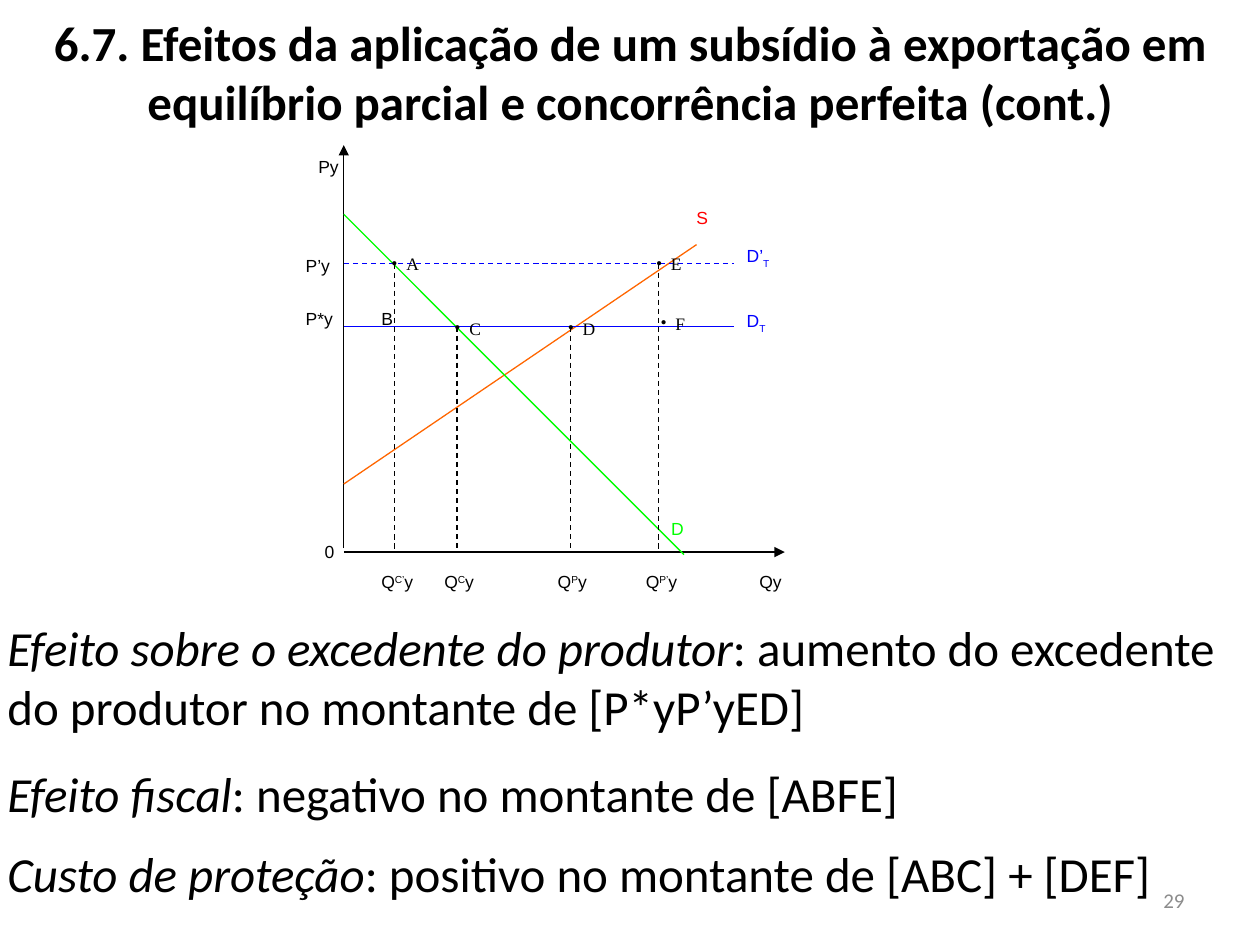
"""Builds the slide on the effects of an export subsidy in partial equilibrium."""
from dataclasses import dataclass

from lxml import etree
from pptx import Presentation
from pptx import util as u
from pptx.dml.color import RGBColor
from pptx.enum import dml, shapes, text
from pptx.oxml import ns


@dataclass(frozen=True)
class Theme:
    """Colours, fonts and type sizes of the slide."""
    ink: str = "000000"
    muted: str = "8C8C8C"
    demand: str = "00FF00"
    supply: str = "FF6600"
    supply_label: str = "FF0000"
    trade: str = "0000FF"
    body_font: str = "Calibri"
    label_font: str = "Arial"
    point_font: str = "Times New Roman"
    body_size: int = 28
    number_size: int = 12
    label_size: int = 10


THEME = Theme()
ORIGIN_X, ORIGIN_Y, UNIT = 6.93, 11.18, 0.254
WORLD_PRICE, SUBSIDY_PRICE = 18.1, 23.1
QUANTITIES = [
    (4, SUBSIDY_PRICE, "C’"),
    (9, WORLD_PRICE, "C"),
    (18, WORLD_PRICE, "P"),
    (25, SUBSIDY_PRICE, "P’"),
]
POINTS = [
    ("A", 2, 24.4, 0.2),
    ("C", 7, 19.3, 0.2),
    ("D", 16, 19.3, 0.2),
    ("E", 23, 24.4, 0.2),
    ("F", 23, 19.7, 0.29),
]
LABELS = [
    ("Py", -3, 32.1, THEME.ink),
    ("P’y", -4, 24.3, THEME.ink),
    ("P*y", -4, 20.1, THEME.ink),
    ("B", 2, 20.1, THEME.ink),
    ("0", -2.5, 1.6, THEME.ink),
    ("Qy", 32, -0.8, THEME.ink),
    ("D", 25, 3.4, THEME.demand),
    ("S", 27, 28.1, THEME.supply_label),
]
EFFECTS = [
    ("Efeito sobre o excedente do produtor",
     ": aumento do excedente do produtor no montante de [P*yP’yED]", 12.32, 2.64),
    ("Efeito fiscal", ": negativo no montante de [ABFE]", 15.27, 1.45),
    ("Custo de proteção", ": positivo no montante de [ABC] + [DEF]", 16.87, 1.45),
]


def place(quantity, price):
    """Turn a quantity and a price into a position on the slide."""
    return u.Cm(ORIGIN_X + quantity * UNIT), u.Cm(ORIGIN_Y - price * UNIT)


def style_run(run, size, font, colour=THEME.ink):
    """Set the size, font and colour of a run."""
    run.font.size = u.Pt(size)
    run.font.name = font
    run.font.color.rgb = RGBColor.from_string(colour)


def add_text(slide, parts, left, top, width, height, size, font, colour=THEME.ink):
    """Add a wrapping text box of one paragraph and return its frame."""
    frame = slide.shapes.add_textbox(left, top, width, height).text_frame
    frame.word_wrap = True
    for part in parts:
        run = frame.paragraphs[0].add_run()
        run.text = part
        style_run(run, size, font, colour)
    return frame


def add_label(slide, parts, quantity, price, colour=THEME.ink, shift=0,
              font=THEME.label_font):
    """Add a graph label whose second part is raised or lowered by shift percent."""
    frame = add_text(slide, parts, *place(quantity, price), u.Cm(2.03), u.Cm(0.76),
                     THEME.label_size, font, colour)
    for run in frame.paragraphs[0].runs[1:2]:
        run.font._element.set("baseline", str(shift * 1000))
    return frame


def add_point(slide, name, quantity, price, indent):
    """Add a named point marked by a bullet."""
    frame = add_label(slide, [name], quantity, price, font=THEME.point_font)
    frame.margin_left += u.Cm(indent)
    hang = u.Cm(0.3)
    properties = frame.paragraphs[0]._p.get_or_add_pPr()
    properties.set("marL", str(hang))
    properties.set("indent", str(-hang))
    etree.SubElement(properties, ns.qn("a:buFont")).set("typeface", THEME.point_font)
    etree.SubElement(properties, ns.qn("a:buChar")).set("char", "•")


def add_line(slide, start, end, colour=THEME.ink, dashed=False, arrow=False):
    """Draw a line between two quantity and price pairs."""
    connector = slide.shapes.add_connector(
        shapes.MSO_CONNECTOR.STRAIGHT, *place(*start), *place(*end))
    connector.line.width = u.Pt(0.75)
    connector.line.color.rgb = RGBColor.from_string(colour)
    if dashed:
        connector.line.dash_style = dml.MSO_LINE.DASH
    if arrow:
        outline = connector.line._get_or_add_ln()
        etree.SubElement(outline, ns.qn("a:tailEnd")).set("type", "triangle")
    etree.SubElement(connector._element.spPr, ns.qn("a:effectLst"))


def add_title(slide, wording):
    """Place and format the title."""
    title = slide.shapes.title
    title.left, title.top = u.Cm(0), u.Cm(0.13)
    title.width, title.height = u.Cm(25.4), u.Cm(2.64)
    frame = title.text_frame
    frame.text = wording
    frame.vertical_anchor = text.MSO_ANCHOR.TOP
    run = frame.paragraphs[0].runs[0]
    style_run(run, THEME.body_size, THEME.body_font)
    run.font.bold = True


def add_effect(slide, name, outcome, top, height):
    """Add a statement that opens with an effect in italics."""
    frame = add_text(slide, [name, outcome], u.Cm(-0.1), u.Cm(top), u.Cm(25.4),
                     u.Cm(height), THEME.body_size, THEME.body_font)
    frame.vertical_anchor = text.MSO_ANCHOR.MIDDLE
    frame.paragraphs[0].runs[0].font.italic = True


def add_page_number(slide, number):
    """Add the page number at the lower right."""
    frame = add_text(slide, [number], u.Cm(18.2), u.Cm(17.65), u.Cm(5.93), u.Cm(1.01),
                     THEME.number_size, THEME.body_font, THEME.muted)
    frame.vertical_anchor = text.MSO_ANCHOR.MIDDLE
    frame.paragraphs[0].alignment = text.PP_ALIGN.RIGHT


def add_graph(slide):
    """Draw the axes, curves, prices, quantities, points and labels."""
    add_line(slide, (0, 0.5), (0, 32.5), arrow=True)
    add_line(slide, (0, 0.2), (35, 0.2), arrow=True)
    add_line(slide, (0, 5.6), (28, 24.6), THEME.supply)
    add_line(slide, (0, 27), (27, 0), THEME.demand)
    add_line(slide, (0, WORLD_PRICE), (31, WORLD_PRICE), THEME.trade)
    add_line(slide, (0, SUBSIDY_PRICE), (31, SUBSIDY_PRICE), THEME.trade, dashed=True)
    for quantity, price, mark in QUANTITIES:
        add_line(slide, (quantity, price), (quantity, 0.1), dashed=True)
        add_label(slide, ["Q", mark, "y"], quantity - 2, -0.8, shift=30)
    for point in POINTS:
        add_point(slide, *point)
    for wording, quantity, price, colour in LABELS:
        add_label(slide, [wording], quantity, price, colour)
    add_label(slide, ["D", "T"], 31, 19.9, THEME.trade, shift=-30)
    add_label(slide, ["D’", "T"], 31, 25.1, THEME.trade, shift=-30)


def main():
    """Build and save the slide."""
    deck = Presentation()
    deck.slide_width, deck.slide_height = u.Cm(25.4), u.Cm(19.05)
    slide = deck.slides.add_slide(deck.slide_layouts.get_by_name("Title Only"))
    add_title(slide, "6.7. Efeitos da aplicação de um subsídio à exportação em "
                     "equilíbrio parcial e concorrência perfeita (cont.)")
    add_page_number(slide, "29")
    add_graph(slide)
    for effect in EFFECTS:
        add_effect(slide, *effect)
    deck.save("out.pptx")


if __name__ == "__main__":
    main()
